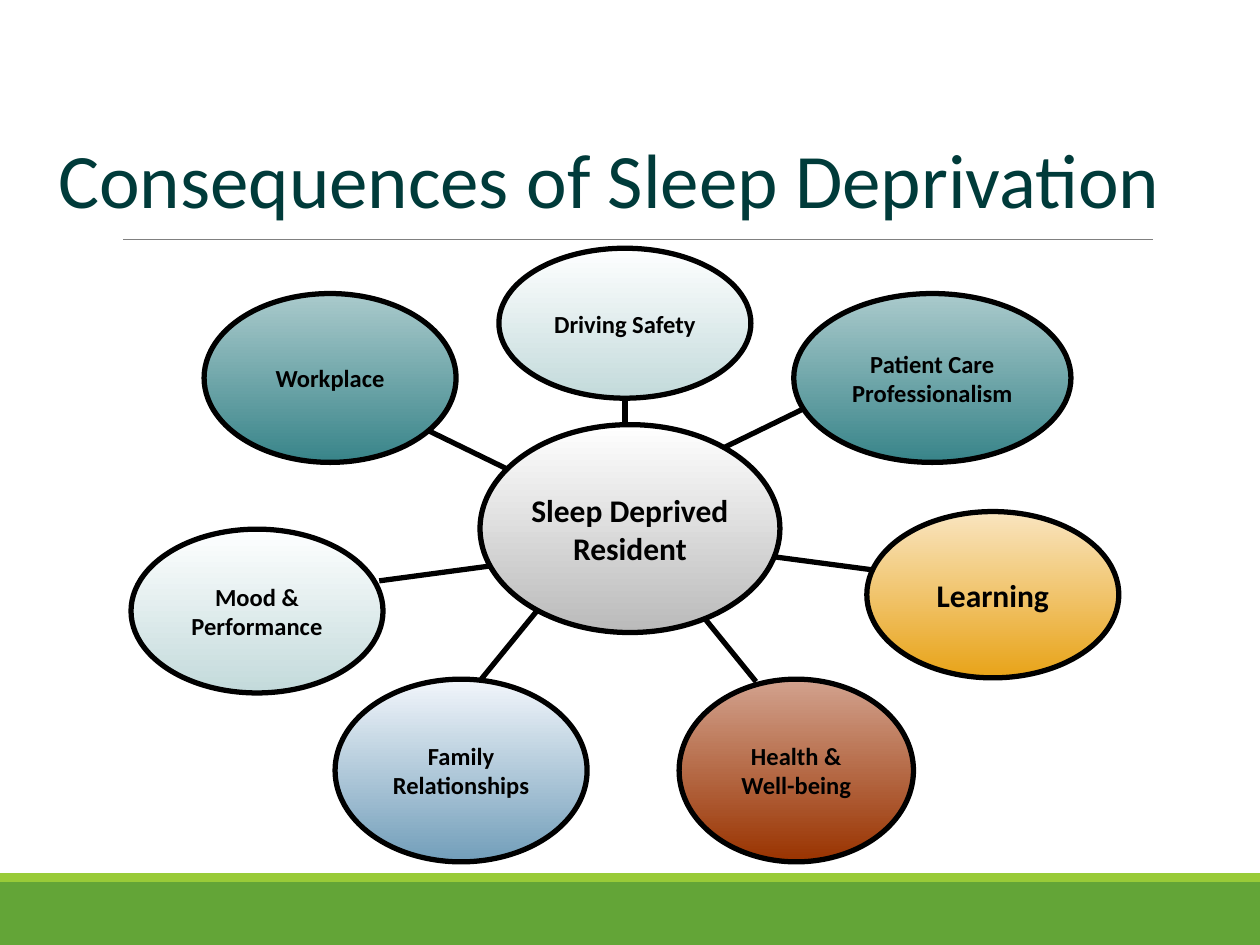
import pptx
import pptx.util
import pptx.dml.color
import pptx.enum.shapes
import pptx.enum.text
import pptx.oxml.ns
import lxml.etree
from pptx.util import Inches

THEME = {
    "font": "Calibri", "title_size": 44, "large": 18, "small": 14,
    "title": "003B3A", "ink": "000000", "rule": "808080",
    "band": "63A537", "band_edge": "99CB38",
    "mist": ("FEFFFF", "C3DADB"), "teal": ("AACACC", "388489"),
    "gold": ("F9E5C0", "E8A318"), "rust": ("D2A28E", "993300"),
    "blue": ("F2F6FB", "729EBA"), "grey": ("FFFFFF", "BABABA"),
}

TITLE = "Consequences of Sleep Deprivation"
# text, (left, top, width, height), gradient, text size, spoke (x1, y1, x2, y2)
CONSEQUENCES = [
    ("Driving Safety", (3.96, 1.97, 2, 1.19), "mist", "small", (4.96, 3.43, 4.96, 2.83)),
    ("Patient Care Professionalism", (6.3, 2.33, 2.2, 1.34), "teal", "small", (5.71, 3.57, 6.49, 3.19)),
    ("Learning", (6.88, 4.06, 2, 1.32), "gold", "large", (6, 4.4, 6.98, 4.53)),
    ("Health &\vWell-being", (5.39, 5.39, 1.86, 1.45), "rust", "small", (5.57, 4.88, 6, 5.41)),
    ("Family Relationships", (2.66, 5.39, 2, 1.45), "blue", "small", (4.26, 4.85, 3.82, 5.39)),
    ("Mood & Performance", (1.04, 4.2, 2, 1.3), "mist", "small", (3.98, 4.48, 3.01, 4.61)),
    ("Workplace", (1.62, 2.33, 2, 1.34), "teal", "small", (4.02, 3.72, 3.24, 3.34)),
]
RESIDENT = ("Sleep Deprived Resident", (3.81, 3.37, 2.38, 1.65), "grey", "large")
BANDS = [("band", (0, 7, 10, 0.5)), ("band_edge", (0, 6.93, 10, 0.07))]
RULE = (0.98, 1.9, 9.15, 1.9)


def rgb(key):
    return pptx.dml.color.RGBColor.from_string(THEME.get(key, key))


def write(shape, text, *, size, color="ink", bold=False, anchor="MIDDLE", margins=(0, 0)):
    frame = shape.text_frame
    frame.word_wrap = True
    frame.auto_size = pptx.enum.text.MSO_AUTO_SIZE.NONE
    frame.vertical_anchor = getattr(pptx.enum.text.MSO_ANCHOR, anchor)
    frame.margin_left = frame.margin_right = Inches(margins[0])
    frame.margin_top = frame.margin_bottom = Inches(margins[1])
    frame.text = text
    paragraph = frame.paragraphs[0]
    paragraph.alignment = pptx.enum.text.PP_ALIGN.CENTER
    for run in paragraph.runs:
        run.font.name = THEME["font"]
        run.font.size = pptx.util.Pt(THEME[size])
        run.font.bold = bold
        run.font.color.rgb = rgb(color)


def add_line(slide, ends, color, width):
    line = slide.shapes.add_connector(
        pptx.enum.shapes.MSO_CONNECTOR.STRAIGHT, *map(Inches, ends))
    line.line.color.rgb = rgb(color)
    line.line.width = pptx.util.Pt(width)
    lxml.etree.SubElement(line._element.spPr, pptx.oxml.ns.qn("a:effectLst"))


def add_band(slide, color, box):
    band = slide.shapes.add_shape(
        pptx.enum.shapes.MSO_SHAPE.RECTANGLE, *map(Inches, box))
    band.shadow.inherit = False
    band.fill.solid()
    band.fill.fore_color.rgb = rgb(color)
    band.line.fill.background()


def add_bubble(slide, text, box, gradient, size):
    bubble = slide.shapes.add_shape(
        pptx.enum.shapes.MSO_SHAPE.OVAL, *map(Inches, box))
    bubble.shadow.inherit = False
    bubble.fill.gradient()
    bubble.fill.gradient_angle = 270  # top to bottom
    for stop, color in zip(bubble.fill.gradient_stops, THEME[gradient]):
        stop.color.rgb = rgb(color)
    bubble.line.color.rgb = rgb("ink")
    bubble.line.width = pptx.util.Pt(3)
    write(bubble, text, size=size, bold=True)


def main():
    deck = pptx.Presentation()
    deck.slide_width, deck.slide_height = Inches(10), Inches(7.5)
    slide = deck.slides.add_slide(deck.slide_layouts[5])

    # Footer bands and rule under the title
    for color, box in BANDS:
        add_band(slide, color, box)
    add_line(slide, RULE, "rule", 0.5)

    # Title
    heading = slide.shapes.title
    heading.left, heading.top, heading.width, heading.height = map(
        Inches, (0.18, 0.25, 9.32, 1.58))
    write(heading, TITLE, size="title_size", color="title", anchor="BOTTOM",
          margins=(0.1, 0.05))

    # Spokes and consequences, then the hub on top
    for text, box, gradient, size, spoke in CONSEQUENCES:
        add_line(slide, spoke, "ink", 3)
        add_bubble(slide, text, box, gradient, size)
    add_bubble(slide, *RESIDENT)

    deck.save("out.pptx")


if __name__ == "__main__":
    main()
